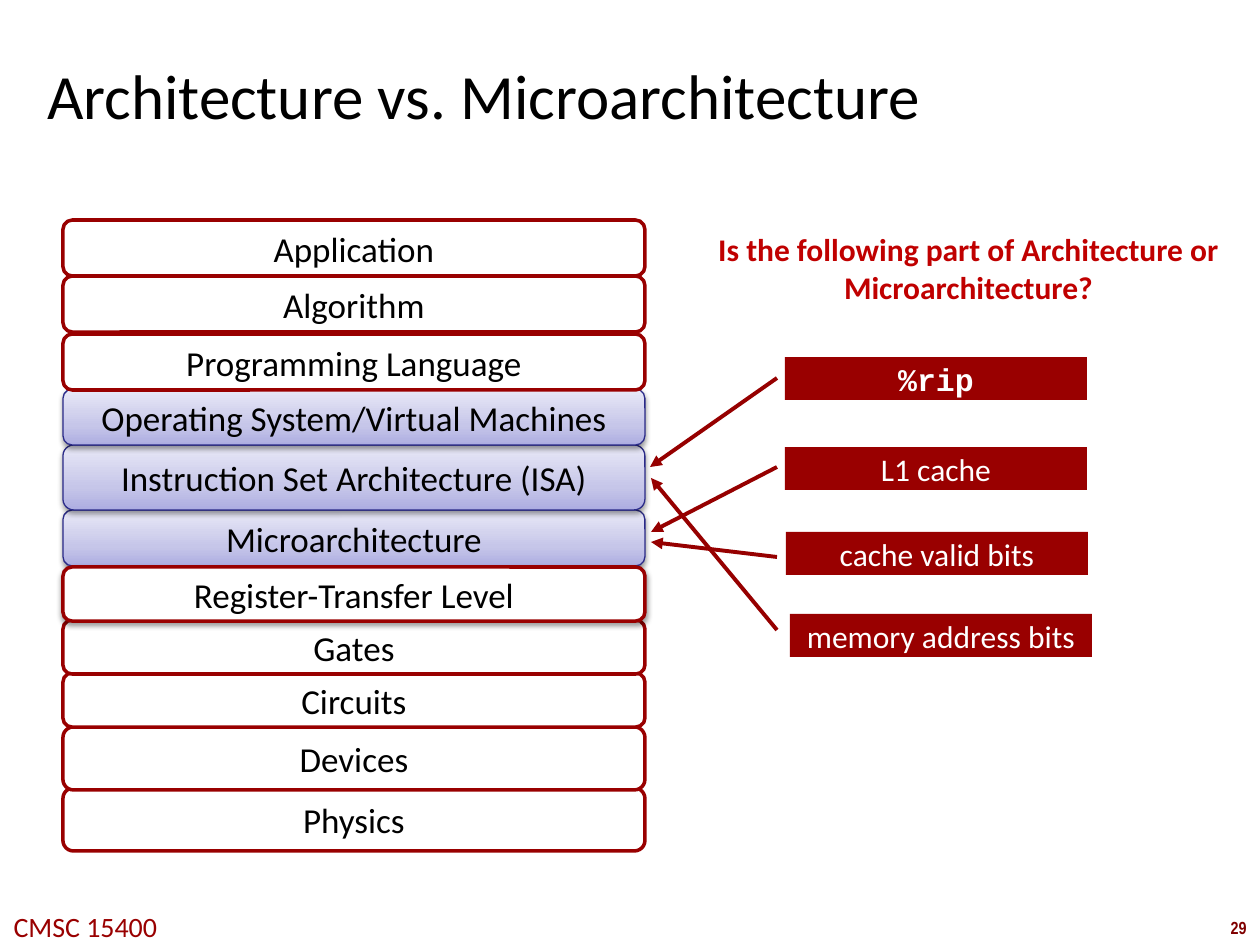
from dataclasses import dataclass

from lxml.etree import SubElement
from pptx import Presentation
from pptx.dml.color import RGBColor
from pptx.enum.shapes import MSO_CONNECTOR, MSO_SHAPE
from pptx.enum.text import MSO_ANCHOR, MSO_AUTO_SIZE, PP_ALIGN
from pptx.oxml import parse_xml
from pptx.oxml.ns import nsdecls, qn
from pptx.util import Emu, Pt


@dataclass(frozen=True)
class Theme:
    red: str = "990000"
    arrow: str = "960000"
    question: str = "C00000"
    number: str = "800000"
    navy: str = "2A2A89"
    black: str = "000000"
    white: str = "FFFFFF"
    gradient: tuple = ((0, "ADADE1"), (35, "C6C6E9"), (100, "E9E9F7"))
    font: str = "Calibri"
    code_font: str = "Courier New"
    number_font: str = "Arial Narrow"
    title_size: int = 36
    layer_size: int = 20
    item_size: int = 18
    footer_size: int = 16
    number_size: int = 10


theme = Theme()


def px(*lengths):
    """Turn pixels (126 to the inch) into EMU."""
    return [Emu(round(length * 914400 / 126)) for length in lengths]


def write(shape, text, size, color, font=theme.font, bold=False,
          align=PP_ALIGN.CENTER, wrap=True):
    frame = shape.text_frame
    frame.text = text
    frame.word_wrap = wrap
    paragraph = frame.paragraphs[0]
    paragraph.alignment = align
    paragraph.font.size = Pt(size)
    paragraph.font.name = font
    paragraph.font.bold = bold
    paragraph.font.color.rgb = RGBColor.from_string(color)
    return frame


presentation = Presentation()
presentation.slide_width, presentation.slide_height = px(1260, 945)
slide = presentation.slides.add_slide(presentation.slide_layouts[5])
shapes = slide.shapes

# Title
title = shapes.title
title.left, title.top, title.width, title.height = px(42, -105, 1071, 398)
frame = write(title, "Architecture vs. Microarchitecture", theme.title_size,
              theme.black, align=PP_ALIGN.LEFT)
frame.auto_size = MSO_AUTO_SIZE.NONE
frame.vertical_anchor = MSO_ANCHOR.MIDDLE
frame.margin_left, frame.margin_top, frame.margin_right, frame.margin_bottom = px(5, 5, 5, 5)

# Footer and question
for box, text, size, color, font, bold, wrap in (
    ((1217, 911, 43, 34), "29", theme.number_size, theme.number, theme.number_font, True, False),
    ((-4, 903, 179, 47), "CMSC 15400", theme.footer_size, theme.red, theme.font, False, False),
    ((677, 224, 583, 94), "Is the following part of Architecture or Microarchitecture?",
     theme.item_size, theme.question, theme.font, True, True),
):
    write(shapes.add_textbox(*px(*box)), text, size, color, font, bold, wrap=wrap)

# Abstraction layers, back to front: name, top, height, shaded, shadowed
layers = (
    ("Physics", 788, 63, False, False),
    ("Devices", 727, 63, False, False),
    ("Circuits", 673, 54, False, False),
    ("Gates", 620, 54, False, False),
    ("Microarchitecture", 510, 56, True, True),
    ("Instruction Set Architecture (ISA)", 445, 65, True, True),
    ("Operating System/Virtual Machines", 389, 56, True, True),
    ("Programming Language", 334, 56, False, False),
    ("Algorithm", 276, 56, False, False),
    ("Application", 220, 56, False, False),
    ("Register-Transfer Level", 567, 54, False, True),
)
stops = "".join(
    f'<a:gs pos="{position * 1000}"><a:srgbClr val="{color}"/></a:gs>'
    for position, color in theme.gradient
)
for name, top, height, shaded, shadowed in layers:
    layer = shapes.add_shape(MSO_SHAPE.ROUNDED_RECTANGLE, *px(63, top, 582, height))
    layer.shadow.inherit = False
    properties = layer._element.spPr
    if shaded:
        properties.find(qn("a:prstGeom")).addnext(parse_xml(
            f'<a:gradFill {nsdecls("a")} rotWithShape="1"><a:gsLst>{stops}</a:gsLst>'
            '<a:lin ang="16200000" scaled="0"/></a:gradFill>'))
    else:
        layer.fill.solid()
        layer.fill.fore_color.rgb = RGBColor.from_string(theme.white)
    layer.line.color.rgb = RGBColor.from_string(theme.navy if shaded else theme.red)
    layer.line.width = Pt(0.75 if shaded else 2)
    if shadowed:
        properties.find(qn("a:effectLst")).append(parse_xml(
            f'<a:outerShdw {nsdecls("a")} blurRad="{Pt(3.1)}" dist="{Pt(1.6)}" '
            'dir="5400000" rotWithShape="0"><a:srgbClr val="000000">'
            '<a:alpha val="38000"/></a:srgbClr></a:outerShdw>'))
    frame = write(layer, name, theme.layer_size, theme.black, wrap=False)
    frame.vertical_anchor = MSO_ANCHOR.MIDDLE

# Items, each with an arrow to the layer it belongs to
items = (
    ("%rip", 785, 357, theme.code_font, True, (777, 378), (650, 467)),
    ("L1 cache", 785, 447, theme.font, False, (777, 467), (651, 532)),
    ("cache valid bits", 786, 532, theme.font, False, (777, 557), (651, 542)),
    ("memory address bits", 790, 614, theme.font, False, (777, 630), (651, 478)),
)
for name, left, top, font, bold, start, end in items:
    item = shapes.add_shape(MSO_SHAPE.RECTANGLE, *px(left, top, 302, 43))
    item.shadow.inherit = False
    item.fill.solid()
    item.fill.fore_color.rgb = RGBColor.from_string(theme.red)
    item.line.fill.background()
    frame = write(item, name, theme.item_size, theme.white, font, bold)
    frame.vertical_anchor = MSO_ANCHOR.MIDDLE

    arrow = shapes.add_connector(MSO_CONNECTOR.STRAIGHT, *px(*start, *end))
    arrow.line.color.rgb = RGBColor.from_string(theme.arrow)
    arrow.line.width = Pt(2.25)
    SubElement(arrow.line._get_or_add_ln(), qn("a:tailEnd"), type="triangle")
    SubElement(arrow._element.spPr, qn("a:effectLst"))

presentation.save("out.pptx")
